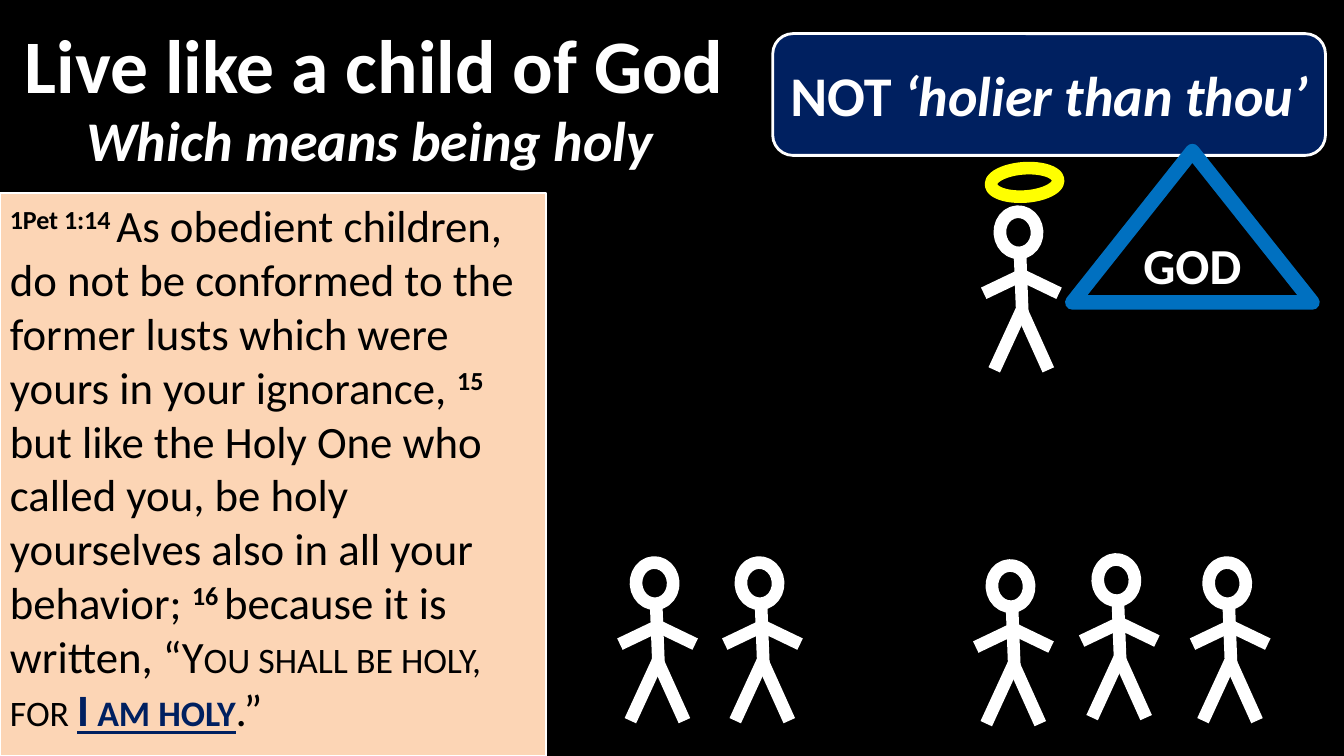
from dataclasses import dataclass
from typing import NamedTuple

from lxml.etree import SubElement
from pptx import Presentation
from pptx.dml.color import RGBColor
from pptx.enum.shapes import MSO_CONNECTOR as Connector, MSO_SHAPE as Shape
from pptx.enum.text import MSO_ANCHOR as Anchor, PP_ALIGN as Align
from pptx.oxml.ns import qn
from pptx.util import Pt

COLORS = {
    "black": "000000",
    "white": "FFFFFF",
    "navy": "002060",
    "blue": "0070C0",
    "peach": "FCD5B5",
    "yellow": "FFFF00",
}
FONT = "Calibri"
STROKE = 9
TILT = -3.9


class Point(NamedTuple):
    x: float
    y: float


class Limb(NamedTuple):
    start: Point
    end: Point


@dataclass
class Panel:
    kind: Shape
    left: float
    top: float
    width: float
    height: float
    fill: str | None = None
    line: str | None = None
    weight: float = 0
    rotation: float = 0
    opacity: int = 100


@dataclass
class Phrase:
    text: str
    color: str = "white"
    bold: bool = False
    italic: bool = False
    underline: bool = False
    superscript: bool = False
    small_caps: bool = False


HEAD = Panel(Shape.OVAL, 0, 0, 26.6, 29.5, None, "white", STROKE, TILT)
SHOULDER = Point(15.5, 45.4)
HIP = Point(15.5, 70.6)
LIMBS = [
    Limb(Point(14.4, 29.5), Point(16.2, 76.3)),
    Limb(HIP, Point(34.6, 113)),
    Limb(SHOULDER, Point(-11.5, 58.3)),
    Limb(SHOULDER, Point(42.3, 58.3)),
    Limb(HIP, Point(-4, 113)),
]
FIGURES = [
    Point(714.2, 151.2),
    Point(454.3, 401.8),
    Point(529.2, 401.8),
    Point(708.5, 403.9),
    Point(784.1, 399.6),
    Point(863.3, 401.8),
]
SCRIPTURE = [
    Phrase("1Pet 1:14 ", "black", bold=True, superscript=True),
    Phrase("As obedient children, do not be conformed to the former lusts which were "
           "yours in your ignorance, ", "black"),
    Phrase("15 ", "black", bold=True, superscript=True),
    Phrase("but like the Holy One who called you, be holy yourselves also in all your "
           "behavior; ", "black"),
    Phrase("16 ", "black", bold=True, superscript=True),
    Phrase("because it is written, “", "black"),
    Phrase("You shall be holy, for ", "black", small_caps=True),
    Phrase("I am holy", "navy", bold=True, underline=True, small_caps=True),
    Phrase(".”", "black"),
]


def color(name: str) -> RGBColor:
    return RGBColor.from_string(COLORS[name])


def draw_panel(shapes, panel: Panel, origin: Point = Point(0, 0)):
    shape = shapes.add_shape(panel.kind, Pt(origin.x + panel.left), Pt(origin.y + panel.top),
                             Pt(panel.width), Pt(panel.height))
    shape.shadow.inherit = False
    shape.rotation = panel.rotation
    if panel.fill:
        shape.fill.solid()
        shape.fill.fore_color.rgb = color(panel.fill)
        if panel.opacity < 100:
            fill_color = shape._element.spPr.find(".//" + qn("a:srgbClr"))
            SubElement(fill_color, qn("a:alpha")).set("val", str(panel.opacity * 1000))
    else:
        shape.fill.background()
    if panel.line:
        shape.line.color.rgb = color(panel.line)
        shape.line.width = Pt(panel.weight)
    else:
        shape.line.fill.background()
    return shape


def write_text(shape, phrases: list[Phrase], *, size: float, align: Align = Align.CENTER,
               anchor: Anchor = Anchor.MIDDLE, wrap: bool = False) -> None:
    frame = shape.text_frame
    frame.word_wrap = wrap
    frame.vertical_anchor = anchor
    paragraph = frame.paragraphs[0]
    paragraph.alignment = align
    for phrase in phrases:
        run = paragraph.add_run()
        run.text = phrase.text
        font = run.font
        font.name = FONT
        font.size = Pt(size)
        font.bold = phrase.bold
        font.italic = phrase.italic
        font.underline = phrase.underline
        font.color.rgb = color(phrase.color)
        properties = run._r.get_or_add_rPr()
        if phrase.superscript:
            properties.set("baseline", "30000")
        if phrase.small_caps:
            properties.set("cap", "small")


def draw_limb(shapes, limb: Limb, origin: Point) -> None:
    connector = shapes.add_connector(
        Connector.STRAIGHT,
        Pt(origin.x + limb.start.x), Pt(origin.y + limb.start.y),
        Pt(origin.x + limb.end.x), Pt(origin.y + limb.end.y))
    connector.line.color.rgb = color("white")
    connector.line.width = Pt(STROKE)
    SubElement(connector._element.spPr, qn("a:effectLst"))


def draw_figure(slide, origin: Point) -> None:
    group = slide.shapes.add_group_shape()
    draw_panel(group.shapes, HEAD, origin)
    for limb in LIMBS:
        draw_limb(group.shapes, limb, origin)


def main() -> None:
    presentation = Presentation()
    presentation.slide_width = Pt(960)
    presentation.slide_height = Pt(540)
    slide = presentation.slides.add_slide(presentation.slide_layouts[6])
    slide.background.fill.solid()
    slide.background.fill.fore_color.rgb = color("black")
    shapes = slide.shapes

    title = draw_panel(shapes, Panel(Shape.ROUNDED_RECTANGLE, 7.2, 12.2, 520.6, 66.2,
                                     "black", opacity=56))
    write_text(title, [Phrase("Live like a child of God", bold=True)], size=54)

    subtitle = draw_panel(shapes, Panel(Shape.ROUNDED_RECTANGLE, 0, 72, 528, 54))
    write_text(subtitle, [Phrase("Which means being holy", bold=True, italic=True)], size=40)

    passage = draw_panel(shapes, Panel(Shape.RECTANGLE, 0, 138, 390, 402,
                                       "peach", "white", 1.5))
    write_text(passage, SCRIPTURE, size=32, align=Align.LEFT, anchor=Anchor.TOP, wrap=True)

    callout = draw_panel(shapes, Panel(Shape.ROUNDED_RECTANGLE, 552, 24, 394.8, 87,
                                       "navy", "white", 2))
    write_text(callout, [Phrase("NOT", bold=True),
                         Phrase(" ‘holier than thou’", bold=True, italic=True)], size=40)

    triangle = draw_panel(shapes, Panel(Shape.ISOSCELES_TRIANGLE, 766, 108, 171.4, 108,
                                        None, "blue", 10.5))
    SubElement(triangle.line._get_or_add_ln(), qn("a:round"))
    write_text(triangle, [Phrase("GOD", bold=True)], size=36)

    for origin in FIGURES:
        draw_figure(slide, origin)
    draw_panel(shapes, Panel(Shape.OVAL, 707.8, 120.2, 48.2, 20.2,
                             None, "yellow", STROKE, TILT))

    presentation.save("out.pptx")


if __name__ == "__main__":
    main()
